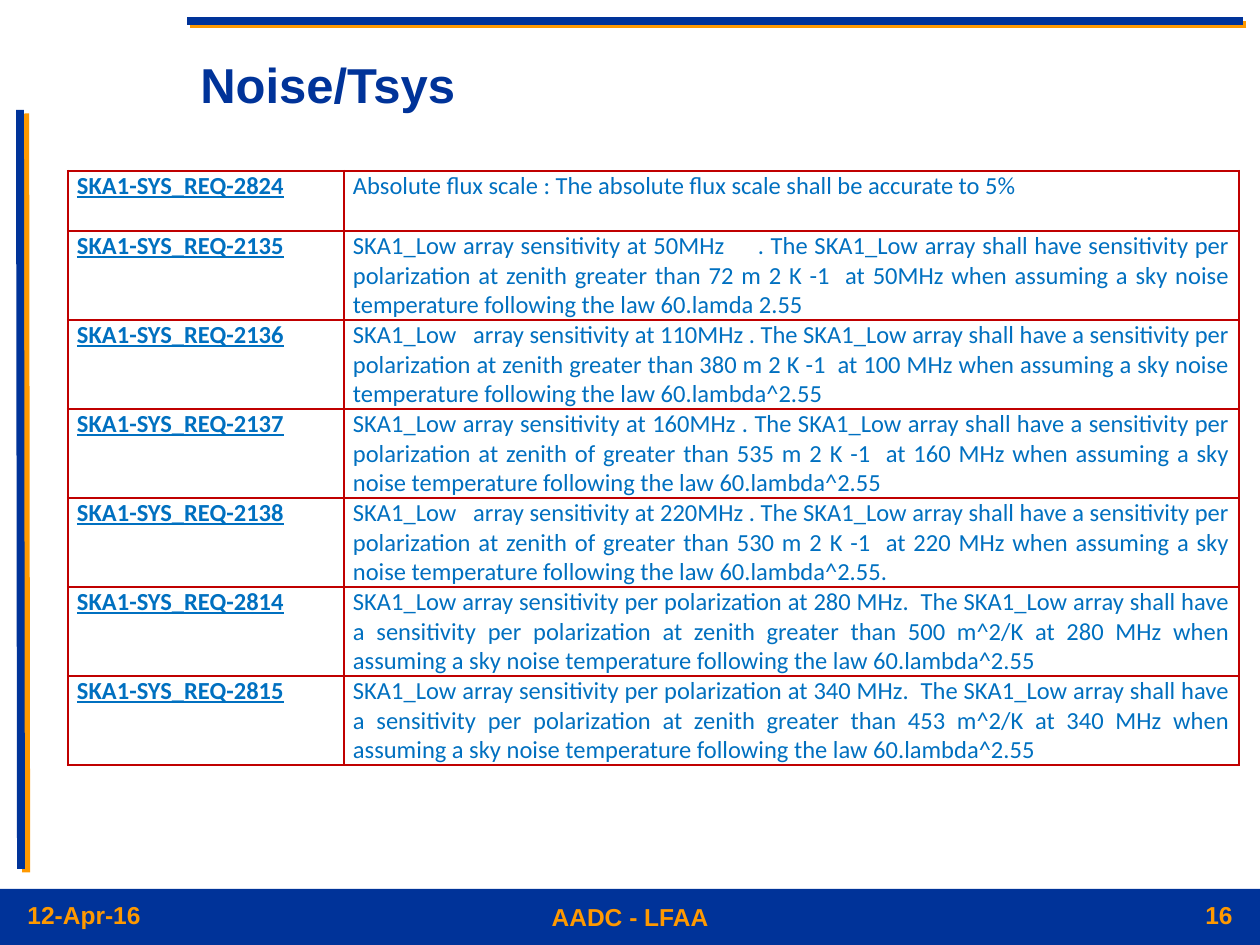
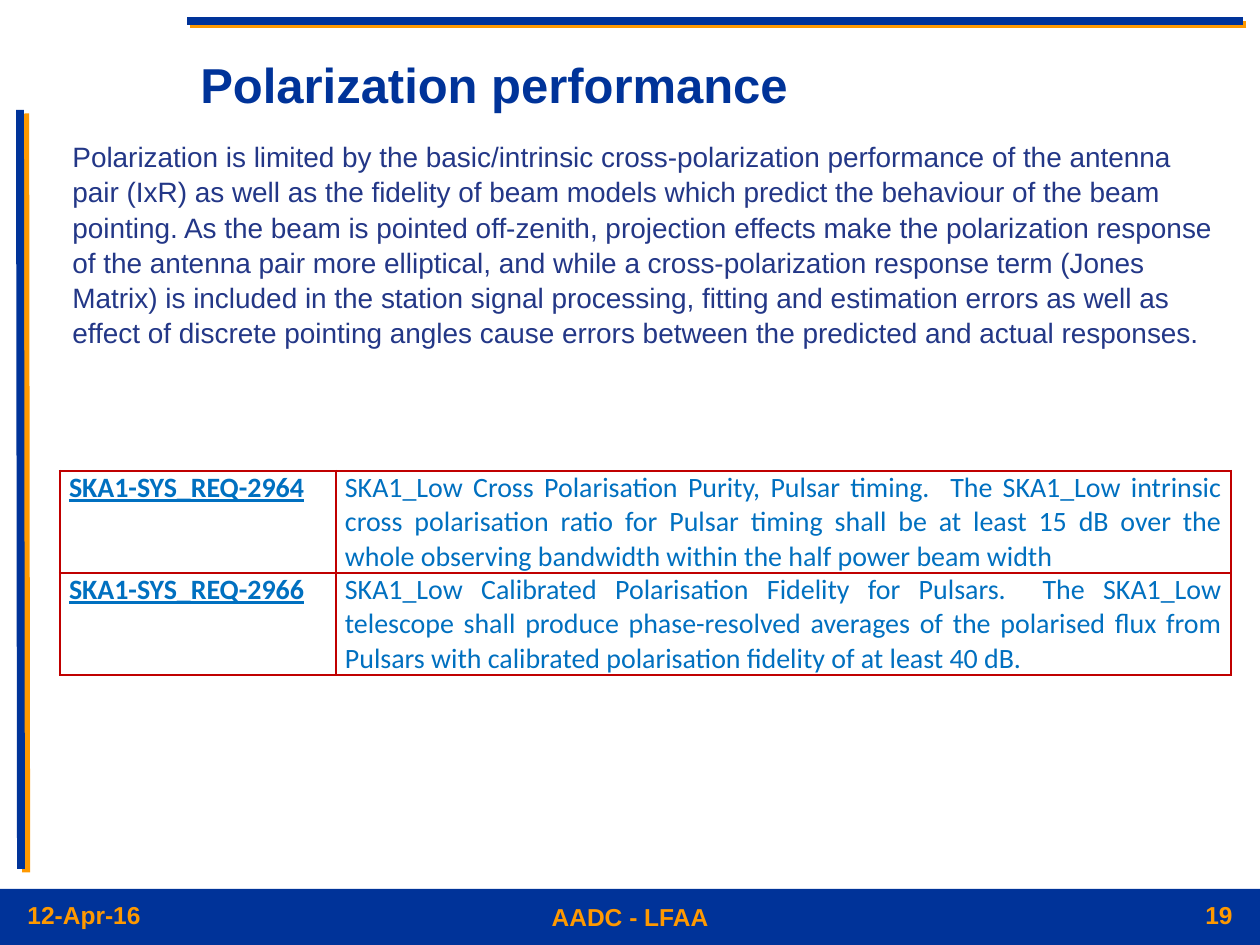
from lxml import etree
from pptx import Presentation
from pptx.dml.color import RGBColor
from pptx.enum.shapes import MSO_CONNECTOR as CONN, MSO_SHAPE as SHAPE
from pptx.enum.text import MSO_ANCHOR as ANCHOR, PP_ALIGN as ALIGN
from pptx.oxml.ns import qn
from pptx.util import Pt

PX = 914400 / 126
SLIDE_W, SLIDE_H = 1260, 945
NAVY = RGBColor(0x00, 0x33, 0x99)
ORANGE = RGBColor(0xFF, 0x99, 0x00)
CELL_BLUE = RGBColor(0x00, 0x70, 0xC0)
BODY_BLUE = RGBColor(0x23, 0x37, 0x87)
RED = RGBColor(0xC0, 0x00, 0x00)

COLUMNS = (276, 895)
CELL_INSET = 9

NOISE_REQS = [
    ("SKA1-SYS_REQ-2824",
     "Absolute flux scale : The absolute flux scale shall be accurate to 5%"),
    ("SKA1-SYS_REQ-2135",
     "SKA1_Low array sensitivity at 50MHz     . The SKA1_Low array shall have sensitivity "
     "per polarization at zenith greater than 72 m 2 K -1  at 50MHz when assuming a sky "
     "noise temperature following the law 60.lamda 2.55"),
    ("SKA1-SYS_REQ-2136",
     "SKA1_Low   array sensitivity at 110MHz . The SKA1_Low array shall have a sensitivity "
     "per polarization at zenith greater than 380 m 2 K -1  at 100 MHz when assuming a sky "
     "noise temperature following the law 60.lambda^2.55"),
    ("SKA1-SYS_REQ-2137",
     "SKA1_Low array sensitivity at 160MHz . The SKA1_Low array shall have a sensitivity "
     "per polarization at zenith of greater than 535 m 2 K -1  at 160 MHz when assuming a "
     "sky noise temperature following the law 60.lambda^2.55"),
    ("SKA1-SYS_REQ-2138",
     "SKA1_Low   array sensitivity at 220MHz . The SKA1_Low array shall have a sensitivity "
     "per polarization at zenith of greater than 530 m 2 K -1  at 220 MHz when assuming a "
     "sky noise temperature following the law 60.lambda^2.55."),
    ("SKA1-SYS_REQ-2814",
     "SKA1_Low array sensitivity per polarization at 280 MHz.  The SKA1_Low array shall "
     "have a sensitivity per polarization at zenith greater than 500 m^2/K at 280 MHz when "
     "assuming a sky noise temperature following the law 60.lambda^2.55"),
    ("SKA1-SYS_REQ-2815",
     "SKA1_Low array sensitivity per polarization at 340 MHz.  The SKA1_Low array shall "
     "have a sensitivity per polarization at zenith greater than 453 m^2/K at 340 MHz when "
     "assuming a sky noise temperature following the law 60.lambda^2.55"),
]
POLARIZATION_REQS = [
    ("SKA1-SYS_REQ-2964",
     "SKA1_Low Cross Polarisation Purity, Pulsar timing.  The SKA1_Low intrinsic cross "
     "polarisation ratio for Pulsar timing shall be at least 15 dB over the whole observing "
     "bandwidth within the half power beam width"),
    ("SKA1-SYS_REQ-2966",
     "SKA1_Low Calibrated Polarisation Fidelity for Pulsars.  The SKA1_Low telescope shall "
     "produce phase-resolved averages of the polarised flux from Pulsars with calibrated "
     "polarisation fidelity of at least 40 dB."),
]
POLARIZATION_TEXT = (
    "Polarization is limited by the basic/intrinsic cross-polarization performance of the "
    "antenna pair (IxR) as well as the fidelity of beam models which predict the behaviour "
    "of the beam pointing. As the beam is pointed off-zenith, projection effects make the "
    "polarization response of the antenna pair more elliptical, and while a "
    "cross-polarization response term (Jones Matrix) is included in the station signal "
    "processing, fitting and estimation errors as well as effect of discrete pointing "
    "angles cause errors between the predicted and actual responses."
)


def px(*lengths):
    return [round(n * PX) for n in lengths]


def write(tf, text, size=14, color=ORANGE, font="Arial", bold=False, underline=False,
          align=ALIGN.LEFT, spacing=None):
    tf.word_wrap = True
    p = tf.paragraphs[0]
    p.alignment = align
    if spacing:
        p.line_spacing = spacing
    r = p.add_run()
    r.text = text
    f = r.font
    f.size, f.name, f.bold, f.underline = Pt(size), font, bold, underline
    f.color.rgb = color


def add_text(s, box, text, anchor=ANCHOR.TOP, **fmt):
    tf = s.shapes.add_textbox(*px(*box)).text_frame
    tf.vertical_anchor = anchor
    write(tf, text, **fmt)


def add_rule(s, ends, distance, angle):
    """Thick navy line with a hard orange shadow."""
    line = s.shapes.add_connector(CONN.STRAIGHT, *px(*ends))
    line.line.color.rgb = NAVY
    line.line.width = Pt(4.5)
    effects = etree.SubElement(line._element.spPr, qn("a:effectLst"))
    shadow = etree.SubElement(effects, qn("a:outerShdw"), dist=str(Pt(distance)),
                              dir=str(angle * 60000), algn="ctr", rotWithShape="0")
    etree.SubElement(shadow, qn("a:srgbClr"), val=str(ORANGE))


def add_footer(s, box, number):
    x, y, w, h = box
    band = s.shapes.add_shape(SHAPE.RECTANGLE, *px(*box))
    band.shadow.inherit = False
    band.fill.solid()
    band.fill.fore_color.rgb = NAVY
    band.line.fill.background()
    side_w, middle_w, margin = 219, 495, 15
    add_text(s, (x + (w - middle_w) / 2, y + 7, middle_w, 45), "AADC - LFAA",
             bold=True, align=ALIGN.CENTER)
    add_text(s, (x + margin, y + 5, side_w, 45), "12-Apr-16", bold=True)
    add_text(s, (x + w - margin - side_w, y + 5, side_w, 45), str(number),
             bold=True, align=ALIGN.RIGHT)


def add_frame(prs, title, number):
    """Slide with the shared rules, footer and title."""
    s = prs.slides.add_slide(prs.slide_layouts[6])
    add_footer(s, (0, 889, SLIDE_W, 56), number)
    add_rule(s, (20, 110, 21, 869), 3.6, 34)
    add_rule(s, (1243, 21, 187, 21), 2.8, 45)
    add_text(s, (188, 28, 1060, 111), title, ANCHOR.MIDDLE,
             size=28, color=NAVY, bold=True)
    return s


def set_border(cell, side, width):
    ln = etree.SubElement(cell._tc.get_or_add_tcPr(), qn(f"a:ln{side}"), w=str(Pt(width)))
    fill = etree.SubElement(ln, qn("a:solidFill"))
    etree.SubElement(fill, qn("a:srgbClr"), val=str(RED))


def add_requirements(s, left, top, reqs, heights, size):
    n_rows, n_cols = len(reqs), len(COLUMNS)
    table = s.shapes.add_table(
        n_rows, n_cols, *px(left, top, sum(COLUMNS), sum(heights))).table
    table.first_row = table.horz_banding = False
    for col, width in zip(table.columns, px(*COLUMNS)):
        col.width = width
    for row, height in zip(table.rows, px(*heights)):
        row.height = height

    for i, req in enumerate(reqs):
        for j, text in enumerate(req):
            cell = table.cell(i, j)
            cell.margin_left = cell.margin_right = px(CELL_INSET)[0]
            cell.margin_top = cell.margin_bottom = 0
            # Outer edges are heavier than inner ones
            outer = {"L": j == 0, "R": j == n_cols - 1, "T": i == 0, "B": i == n_rows - 1}
            for side, is_outer in outer.items():
                set_border(cell, side, 1.5 if is_outer else 1)
            cell.fill.background()
            write(cell.text_frame, text, size=size, color=CELL_BLUE, font="Calibri",
                  bold=j == 0, underline=j == 0, align=ALIGN.JUSTIFY)


def noise_slide(prs):
    s = add_frame(prs, "Noise/Tsys", 16)
    heights = [60] + [89] * (len(NOISE_REQS) - 1)
    add_requirements(s, 68, 171, NOISE_REQS, heights, 14)


def polarization_slide(prs):
    s = add_frame(prs, "Polarization performance", 19)
    add_requirements(s, 60, 471, POLARIZATION_REQS, [102] * len(POLARIZATION_REQS), 16)
    add_text(s, (60, 132, 1168, 251), POLARIZATION_TEXT,
             size=16, color=BODY_BLUE, spacing=1.05)


def main():
    prs = Presentation()
    prs.slide_width, prs.slide_height = px(SLIDE_W, SLIDE_H)
    noise_slide(prs)
    polarization_slide(prs)
    prs.save("out.pptx")


if __name__ == "__main__":
    main()
